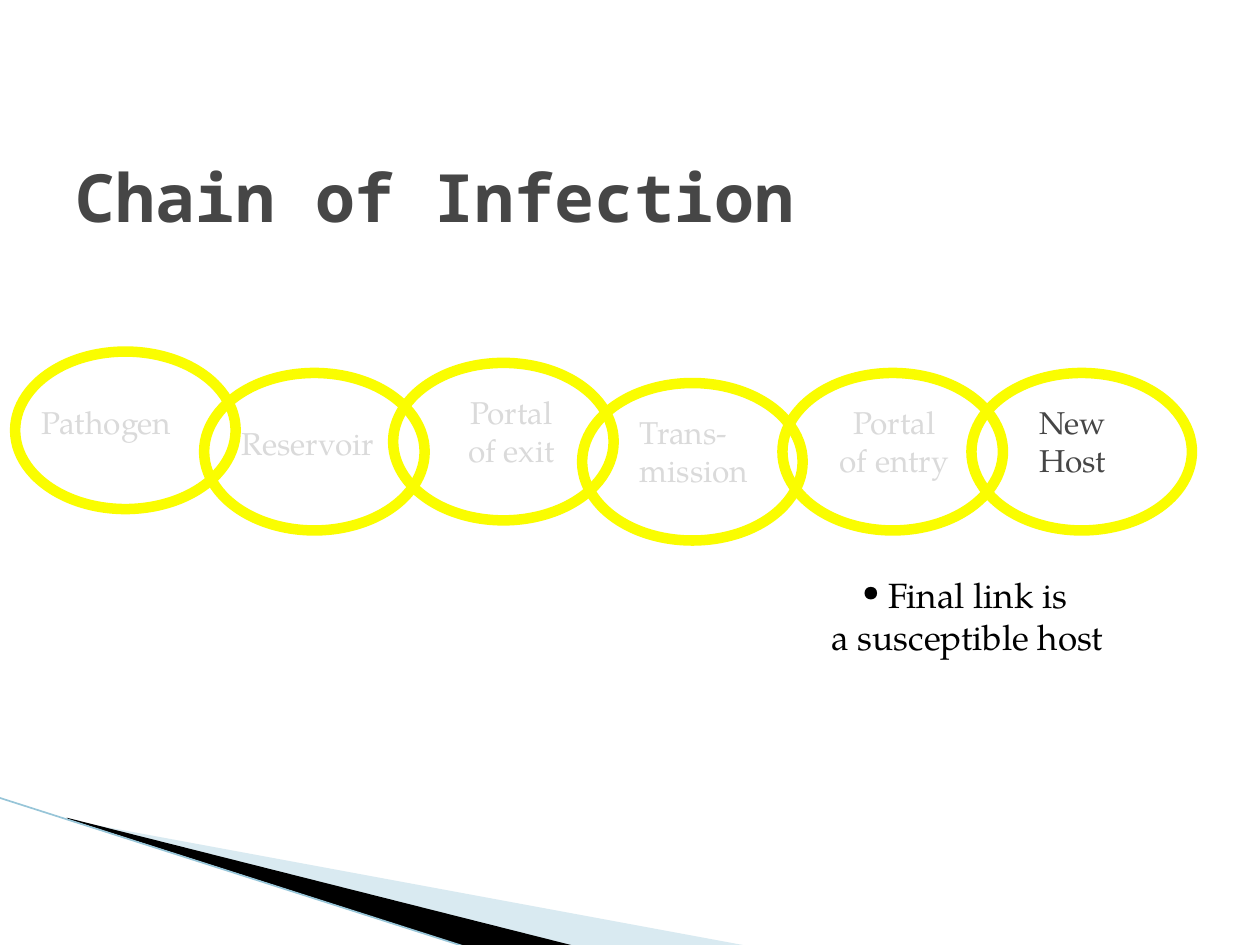
from pptx import Presentation
from pptx import util as u
from pptx.dml.color import RGBColor
from pptx.enum import shapes, text
from pptx.oxml import parse_xml
from pptx.oxml.ns import nsdecls, qn

# Content
TITLE = "Chain of Infection"
TITLE_FONT, BODY_FONT = "Noto Sans Mono", "TeX Gyre Pagella"
YELLOW, FADED, DARK, BLACK = "FAFD00", "DADADA", "464646", "000000"
LEFT, CENTER = text.PP_ALIGN.LEFT, text.PP_ALIGN.CENTER
LINK_SIZE = (1.75, 1.25)

# Lines, ring left and top, label box, alignment, colour
LINKS = [
    (["Pathogen"], (0.12, 2.79), (0.23, 3.15, 1.44, 0.5), LEFT, FADED),
    (["Reservoir"], (1.62, 2.96), (1.82, 3.32, 1.49, 0.5), LEFT, FADED),
    (["Portal", "of exit"], (3.12, 2.88), (3.53, 3.07, 1.06, 0.9), CENTER, FADED),
    (["Trans-", "mission"], (4.62, 3.04), (4.98, 3.23, 1.23, 0.9), LEFT, FADED),
    (["Portal", "of entry"], (6.21, 2.96), (6.48, 3.15, 1.24, 0.9), CENTER, FADED),
    (["New", "Host"], (7.71, 2.96), (8.15, 3.15, 0.83, 0.9), LEFT, DARK),
]
NOTE = ["Final link is", "a susceptible host"]
NOTE_BOX = (6.5, 4.5, 2.5, 0.83)

# Corner wedges: points, colour, opacity in percent
WEDGES = [
    ([(0.55, 6.51), (5.95, 7.51), (4.56, 7.51), (0.55, 6.5)], "A0CBDC", 40),
    ([(0.53, 6.49), (4.57, 7.51), (3.72, 7.52), (0.54, 6.5)], BLACK, 100),
]
EDGE = (-0.01, 6.33, 3.71, 7.52)


def inches(values):
    return [u.Inches(value) for value in values]


def paint(color_format, color):
    color_format.rgb = RGBColor.from_string(color)


def add_span(para, words, font, size, color, bold=False):
    span = para.add_run()
    span.text = words
    span.font.name, span.font.size, span.font.bold = font, u.Pt(size), bold
    paint(span.font.color, color)


def add_text(page, place, lines, size, color, align=LEFT):
    box = page.shapes.add_textbox(*inches(place))
    frame = box.text_frame
    frame.word_wrap = True
    for index, line in enumerate(lines):
        para = frame.add_paragraph() if index else frame.paragraphs[0]
        para.alignment = align
        add_span(para, line, BODY_FONT, size, color)
    return frame


def add_bullet(para, left, hanging):
    props = para._p.get_or_add_pPr()
    props.set("marL", str(u.Inches(left)))
    props.set("indent", str(-u.Inches(hanging)))
    for xml in (f'<a:buSzPct {nsdecls("a")} val="90000"/>',
                f'<a:buFont {nsdecls("a")} typeface="{BODY_FONT}"/>',
                f'<a:buChar {nsdecls("a")} char="•"/>'):
        props.append(parse_xml(xml))


def add_wedge(page, points, color, opacity):
    corners = [inches(point) for point in points]
    builder = page.shapes.build_freeform(*corners[0], scale=1.0)
    builder.add_line_segments(corners[1:], close=True)
    wedge = builder.convert_to_shape()
    wedge.shadow.inherit = False
    wedge.line.fill.background()
    wedge.fill.solid()
    paint(wedge.fill.fore_color, color)
    if opacity < 100:
        fill = wedge._element.spPr.find(qn("a:solidFill"))
        fill[0].append(parse_xml(f'<a:alpha {nsdecls("a")} val="{opacity * 1000}"/>'))


def add_ring(page, corner):
    ring = page.shapes.add_shape(shapes.MSO_SHAPE.OVAL, *inches(corner + LINK_SIZE))
    ring.shadow.inherit = False
    ring.fill.background()
    paint(ring.line.color, YELLOW)
    ring.line.width = u.Pt(6)


def main():
    deck = Presentation()
    deck.slide_width, deck.slide_height = inches((10, 7.5))
    page = deck.slides.add_slide(deck.slide_layouts[5])

    # Corner decoration
    for wedge in WEDGES:
        add_wedge(page, *wedge)
    edge = page.shapes.add_connector(shapes.MSO_CONNECTOR.STRAIGHT, *inches(EDGE))
    paint(edge.line.color, "97C5D8")
    edge.line.width = u.Pt(0.95)
    edge._element.spPr.append(parse_xml(f'<a:effectLst {nsdecls("a")}/>'))

    # Title
    title = page.shapes.title
    title.left, title.top, title.width, title.height = inches((0.5, 1, 8.5, 0.92))
    title.text_frame.vertical_anchor = text.MSO_ANCHOR.BOTTOM
    para = title.text_frame.paragraphs[0]
    para.alignment = LEFT
    add_span(para, TITLE, TITLE_FONT, 38, DARK, bold=True)

    # Chain of rings with labels
    for lines, corner, place, align, color in LINKS:
        add_ring(page, corner)
        add_text(page, place, lines, 18, color, align)

    # Note under the last link
    note = add_text(page, NOTE_BOX, NOTE, 20, BLACK)
    add_bullet(note.paragraphs[0], 0.45, 0.2)

    deck.save("out.pptx")


if __name__ == "__main__":
    main()
